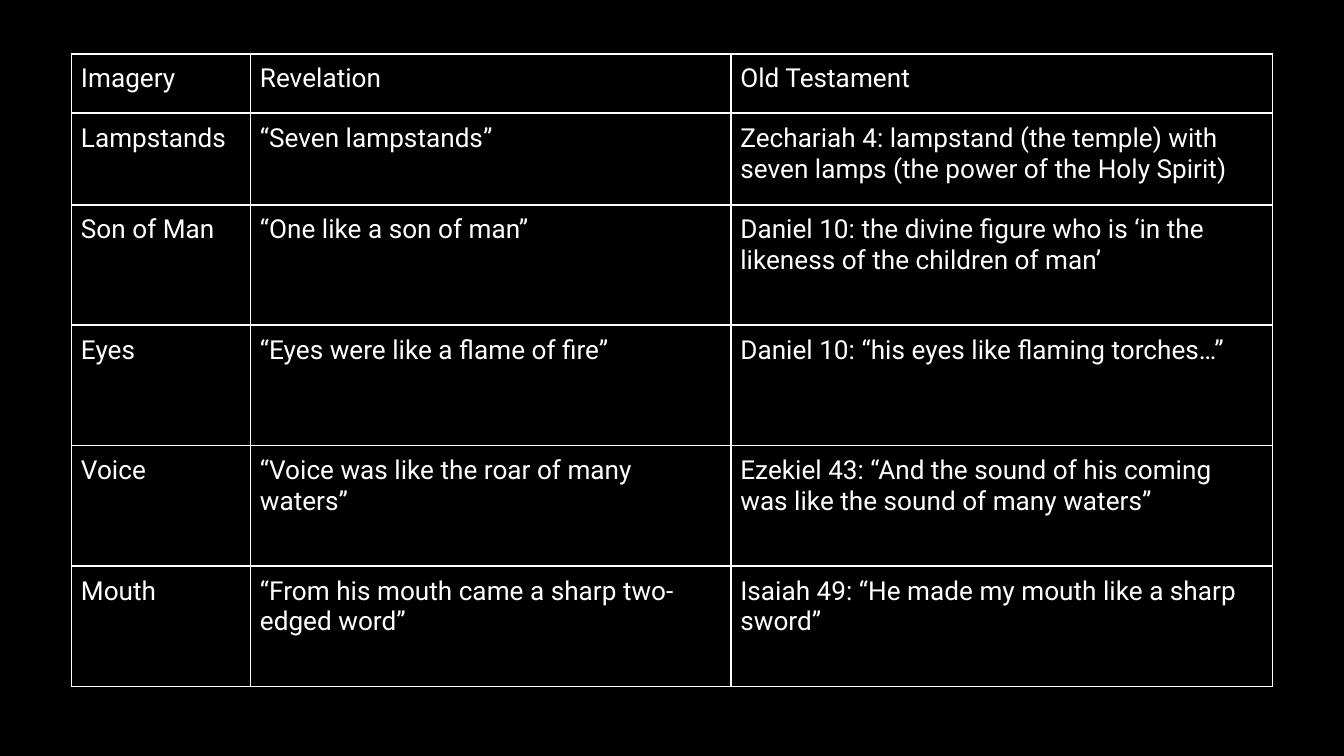
import pptx
import pptx.dml.color
import pptx.oxml.ns
import pptx.util
from lxml import etree
from pptx.util import Cm

FONT = "Roboto"
ROWS = [
    ("Imagery", "Revelation", "Old Testament"),
    ("Lampstands", "“Seven lampstands”",
     "Zechariah 4: lampstand (the temple) with seven lamps (the power of the Holy Spirit)"),
    ("Son of Man", "“One like a son of man”",
     "Daniel 10: the divine figure who is ‘in the likeness of the children of man’"),
    ("Eyes", "“Eyes were like a flame of fire”",
     "Daniel 10: “his eyes like flaming torches…”"),
    ("Voice", "“Voice was like the roar of many waters”",
     "Ezekiel 43: “And the sound of his coming was like the sound of many waters”"),
    ("Mouth", "“From his mouth came a sharp two-edged word”",
     "Isaiah 49: “He made my mouth like a sharp sword”"),
]


def color(hex_value):
    return pptx.dml.color.RGBColor.from_string(hex_value)


def add_borders(cell, hex_value, width):
    tcPr = cell._tc.get_or_add_tcPr()
    qn = pptx.oxml.ns.qn
    for side in ("lnL", "lnR", "lnT", "lnB"):
        ln = etree.SubElement(tcPr, qn(f"a:{side}"), w=str(int(width)))
        fill = etree.SubElement(ln, qn("a:solidFill"))
        etree.SubElement(fill, qn("a:srgbClr"), val=hex_value)


def fill_cell(cell, text):
    add_borders(cell, "FFFFFF", pptx.util.Pt(1))
    cell.fill.background()
    cell.margin_left = cell.margin_right = Cm(0.18)
    cell.margin_top = cell.margin_bottom = Cm(0.18)
    r = cell.text_frame.paragraphs[0].add_run()
    r.text = text
    r.font.name = FONT
    r.font.size = pptx.util.Pt(14)
    r.font.color.rgb = color("FFFFFF")


def add_comparison(s, left, top, width, height):
    """Table of images in Revelation and their Old Testament sources."""
    table = s.shapes.add_table(len(ROWS), 3, left, top, width, height).table
    table.first_row = table.horz_banding = False

    # Column widths and row heights as shares of the box
    for column, share in zip(table.columns, (0.149, 0.4, 0.451)):
        column.width = int(width * share)
    header, first = Cm(1.12), Cm(1.73)
    other = (height - header - first) // (len(ROWS) - 2)
    for i, row in enumerate(table.rows):
        row.height = (header, first)[i] if i < 2 else other

    # Cell texts
    for i, texts in enumerate(ROWS):
        for j, text in enumerate(texts):
            fill_cell(table.cell(i, j), text)


def main():
    prs = pptx.Presentation()
    prs.slide_width, prs.slide_height = Cm(25.4), Cm(14.29)
    s = prs.slides.add_slide(prs.slide_layouts[6])

    # Black background
    s.background.fill.solid()
    s.background.fill.fore_color.rgb = color("000000")

    add_comparison(s, Cm(1.35), Cm(1.02), Cm(22.7), Cm(11.96))
    prs.save("out.pptx")


if __name__ == "__main__":
    main()
